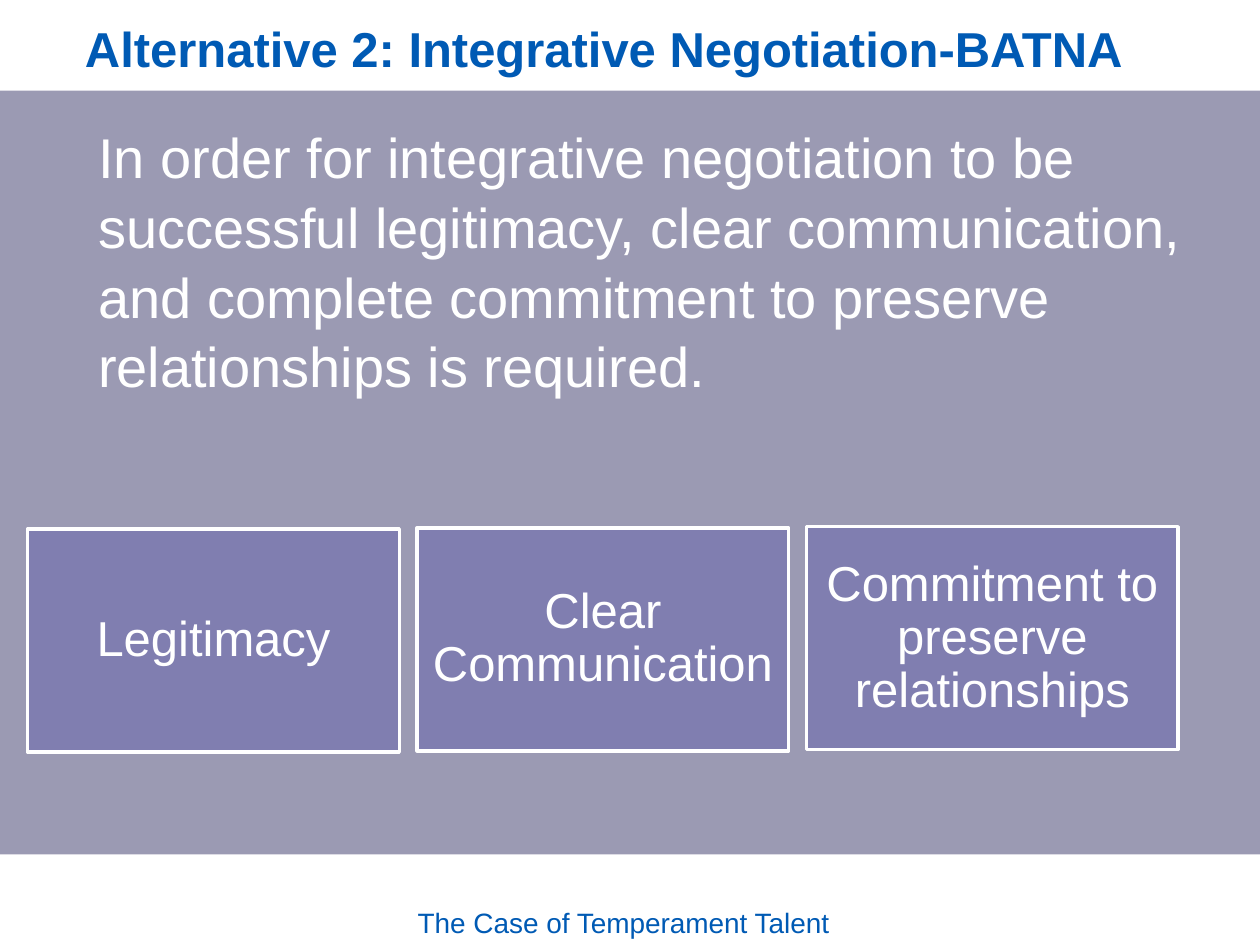
from dataclasses import dataclass

from pptx import Presentation
from pptx.dml.color import RGBColor
from pptx.enum.shapes import MSO_SHAPE
from pptx.enum.text import MSO_ANCHOR, PP_ALIGN
from pptx.util import Pt

RECTANGLE = MSO_SHAPE.RECTANGLE
TOP, MIDDLE, BOTTOM = MSO_ANCHOR.TOP, MSO_ANCHOR.MIDDLE, MSO_ANCHOR.BOTTOM
LEFT, CENTER = PP_ALIGN.LEFT, PP_ALIGN.CENTER

COLORS = {
    "background": "9B9AB3",
    "white": "FFFFFF",
    "card": "807EB0",
    "blue": "005AB4",
}
SLIDE_WIDTH, SLIDE_HEIGHT = 720, 540
BAND_HEIGHT = 51.84
CARD_LEFT, CARD_TOP = 15.8, 302.4
CARD_WIDTH, CARD_HEIGHT = 212.4, 127.4
CARD_STEP, CARD_RISE = 222.5, 0.7
CARD_INSET = 8.6


@dataclass(frozen=True)
class Area:
    left: float
    top: float
    width: float
    height: float

    def lengths(self) -> tuple:
        return Pt(self.left), Pt(self.top), Pt(self.width), Pt(self.height)


@dataclass(frozen=True)
class TextStyle:
    size: float
    color: str = "white"
    bold: bool = False
    align: int = LEFT
    anchor: int = TOP
    line_spacing: float = 1.0


@dataclass(frozen=True)
class Caption:
    text: str
    area: Area
    style: TextStyle


CARD_STYLE = TextStyle(28, align=CENTER, anchor=MIDDLE, line_spacing=0.9)
CARD_LABELS = ("Legitimacy", "Clear Communication",
               "Commitment to preserve relationships")
CAPTIONS = (
    Caption(
        "In order for integrative negotiation to be successful legitimacy, "
        "clear communication, and complete commitment to preserve "
        "relationships is required.",
        Area(49, 64.8, 648, 160),
        TextStyle(32, line_spacing=1.04),
    ),
    Caption(
        "The Case of Temperament Talent",
        Area(210.2, 502.6, 292.3, 37.4),
        TextStyle(16, "blue", align=CENTER, anchor=BOTTOM),
    ),
    Caption(
        "Alternative 2: Integrative Negotiation-BATNA",
        Area(41.5, 7.1, 640, 40),
        TextStyle(28, "blue", bold=True),
    ),
)


def rgb(color: str) -> RGBColor:
    return RGBColor.from_string(COLORS[color])


def apply_formats(target, formats: dict) -> None:
    for attribute, value in formats.items():
        setattr(target, attribute, value)


def write_text(frame, text: str, style: TextStyle) -> None:
    apply_formats(frame, {"word_wrap": True, "vertical_anchor": style.anchor})
    paragraph = frame.paragraphs[0]
    paragraph.text = text
    apply_formats(paragraph, {"alignment": style.align,
                              "line_spacing": style.line_spacing})
    apply_formats(paragraph.font, {"name": "Arial", "size": Pt(style.size),
                                   "bold": style.bold})
    paragraph.font.color.rgb = rgb(style.color)


def draw_rectangle(slide, area: Area, fill: str):
    rectangle = slide.shapes.add_shape(RECTANGLE, *area.lengths())
    rectangle.shadow.inherit = False
    rectangle.fill.solid()
    rectangle.fill.fore_color.rgb = rgb(fill)
    rectangle.line.fill.background()
    return rectangle


def draw_card(slide, index: int, label: str) -> None:
    """Draw one requirement; each card sits slightly higher than the last."""
    area = Area(CARD_LEFT + index * CARD_STEP, CARD_TOP - index * CARD_RISE,
                CARD_WIDTH, CARD_HEIGHT)
    card = draw_rectangle(slide, area, "card")
    card.line.color.rgb = rgb("white")
    card.line.width = Pt(2)
    margins = ("margin_left", "margin_top", "margin_right", "margin_bottom")
    apply_formats(card.text_frame, dict.fromkeys(margins, Pt(CARD_INSET)))
    write_text(card.text_frame, label, CARD_STYLE)


def draw_caption(slide, caption: Caption) -> None:
    box = slide.shapes.add_textbox(*caption.area.lengths())
    write_text(box.text_frame, caption.text, caption.style)


def main() -> None:
    presentation = Presentation()
    apply_formats(presentation, {"slide_width": Pt(SLIDE_WIDTH),
                                 "slide_height": Pt(SLIDE_HEIGHT)})
    slide = presentation.slides.add_slide(presentation.slide_layouts[6])
    slide.background.fill.solid()
    slide.background.fill.fore_color.rgb = rgb("background")

    for band_top in (0, SLIDE_HEIGHT - BAND_HEIGHT):
        draw_rectangle(slide, Area(0, band_top, SLIDE_WIDTH, BAND_HEIGHT), "white")
    for index, label in enumerate(CARD_LABELS):
        draw_card(slide, index, label)
    for caption in CAPTIONS:
        draw_caption(slide, caption)

    presentation.save("out.pptx")


if __name__ == "__main__":
    main()
